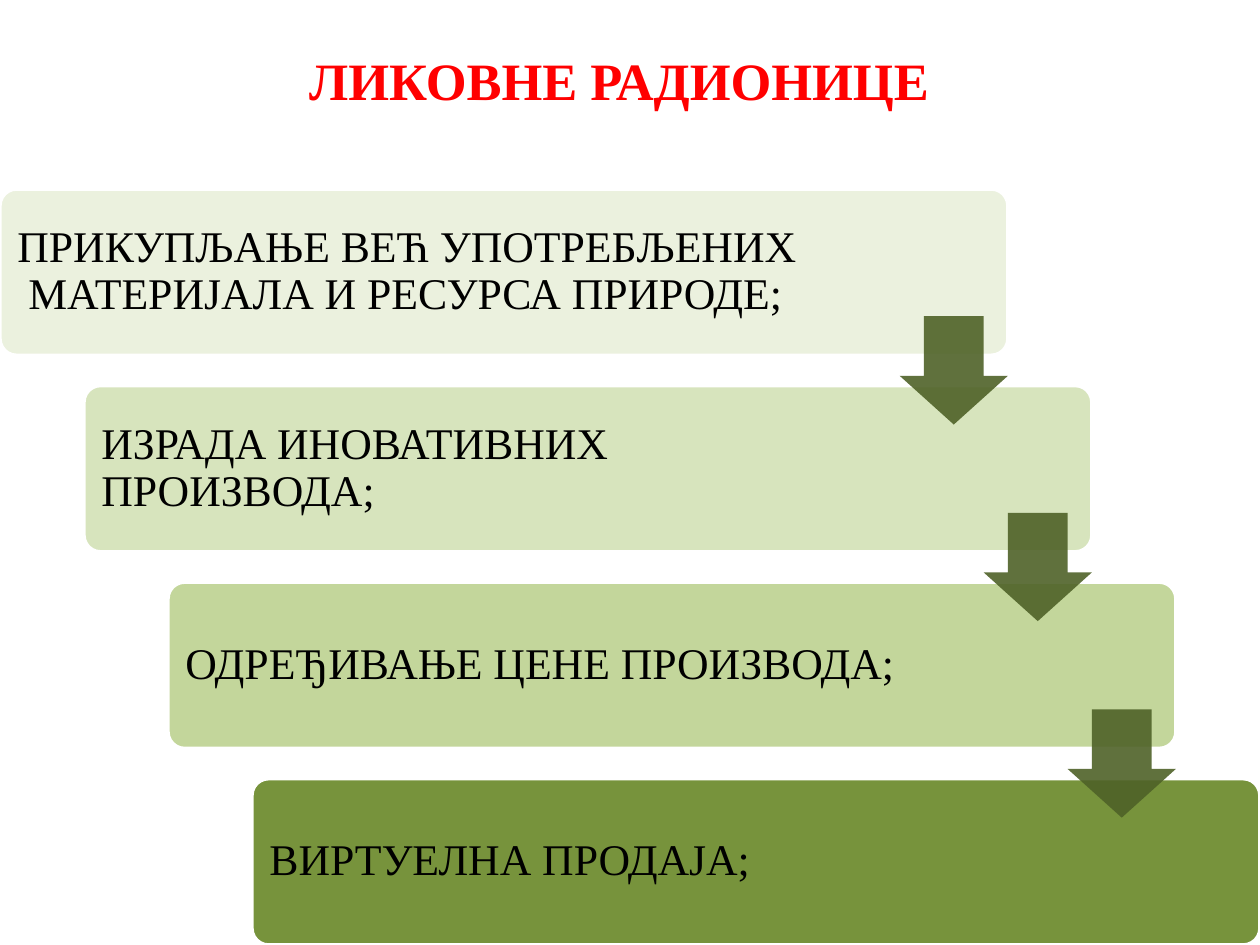
from pptx import Presentation
from pptx.dml.color import RGBColor
from pptx.enum.shapes import MSO_SHAPE
from pptx.enum.text import MSO_ANCHOR, PP_ALIGN
from pptx.oxml.ns import qn
from pptx.util import Pt
from lxml import etree

ROUNDED = MSO_SHAPE.ROUNDED_RECTANGLE
DOWN_ARROW = MSO_SHAPE.DOWN_ARROW
MIDDLE, TOP = MSO_ANCHOR.MIDDLE, MSO_ANCHOR.TOP
LEFT, CENTER = PP_ALIGN.LEFT, PP_ALIGN.CENTER

THEME = {
    "font": "Times New Roman",
    "title_size": 30,
    "step_size": 25,
    "title": RGBColor.from_string("FF0000"),
    "text": RGBColor.from_string("000000"),
    "border": RGBColor.from_string("FFFFFF"),
    "arrow": RGBColor.from_string("4F6228"),
    "steps": [RGBColor.from_string(c) for c in ("EBF1DE", "D7E4BD", "C3D69B", "77933C")],
}

STEPS = [
    "ПРИКУПЉАЊЕ ВЕЋ УПОТРЕБЉЕНИХ  МАТЕРИЈАЛА И РЕСУРСА ПРИРОДЕ;",
    "ИЗРАДА ИНОВАТИВНИХ ПРОИЗВОДА;",
    "ОДРЕЂИВАЊЕ ЦЕНЕ ПРОИЗВОДА;",
    "ВИРТУЕЛНА ПРОДАЈА;",
]

# Staircase geometry in points
STEP_X, STEP_Y = 48, 112.32
BOX_TOP, BOX_WIDTH, BOX_HEIGHT = 108, 576, 95.04
INSET = 2.88
ARROW_LEFT, ARROW_TOP, ARROW_SIZE = 514.08, 180.72, 61.92


def add_text(page, text, left, top, width, height, size, color, anchor, align):
    box = page.shapes.add_textbox(Pt(left), Pt(top), Pt(width), Pt(height))
    frame = box.text_frame
    frame.word_wrap = True
    frame.vertical_anchor = anchor
    para = frame.paragraphs[0]
    para.alignment = align
    span = para.add_run()
    span.text = text
    span.font.name = THEME["font"]
    span.font.size = Pt(size)
    span.font.color.rgb = color
    return frame, para, span


def add_filled(page, preset, left, top, width, height, color, adjustments):
    shape = page.shapes.add_shape(preset, Pt(left), Pt(top), Pt(width), Pt(height))
    shape.shadow.inherit = False
    shape.fill.solid()
    shape.fill.fore_color.rgb = color
    for index, value in enumerate(adjustments):
        shape.adjustments[index] = value
    return shape


deck = Presentation()
deck.slide_width, deck.slide_height = Pt(720), Pt(540)
page = deck.slides.add_slide(deck.slide_layouts[6])

# Steps, each one shifted right and down
for i, (text, color) in enumerate(zip(STEPS, THEME["steps"])):
    left, top = i * STEP_X, BOX_TOP + i * STEP_Y
    box = add_filled(page, ROUNDED, left, top, BOX_WIDTH, BOX_HEIGHT, color, [0.1])
    box.line.color.rgb = THEME["border"]
    box.line.width = Pt(2)
    text_width = 465 if i == 0 else 460
    frame, para, span = add_text(
        page, text, left + INSET, top + INSET, text_width, BOX_HEIGHT - 2 * INSET,
        THEME["step_size"], THEME["text"], MIDDLE, LEFT)
    frame.margin_left = frame.margin_right = Pt(7.2)
    frame.margin_top = frame.margin_bottom = Pt(7.2)
    para.line_spacing = 0.9

# Arrows between neighbouring steps, slightly transparent
for i in range(len(STEPS) - 1):
    arrow = add_filled(
        page, DOWN_ARROW, ARROW_LEFT + i * STEP_X, ARROW_TOP + i * STEP_Y,
        ARROW_SIZE, ARROW_SIZE, THEME["arrow"], [0.55, 0.45])
    arrow.line.fill.background()
    fill_color = arrow.fill._xPr.find(qn("a:solidFill"))[0]
    etree.SubElement(fill_color, qn("a:alpha"), val="90000")

# Title
frame, para, span = add_text(
    page, "ЛИКОВНЕ РАДИОНИЦЕ", 113.76, 23.76, 480.24, 43.92,
    THEME["title_size"], THEME["title"], TOP, CENTER)
span.font.bold = True

deck.save("out.pptx")
